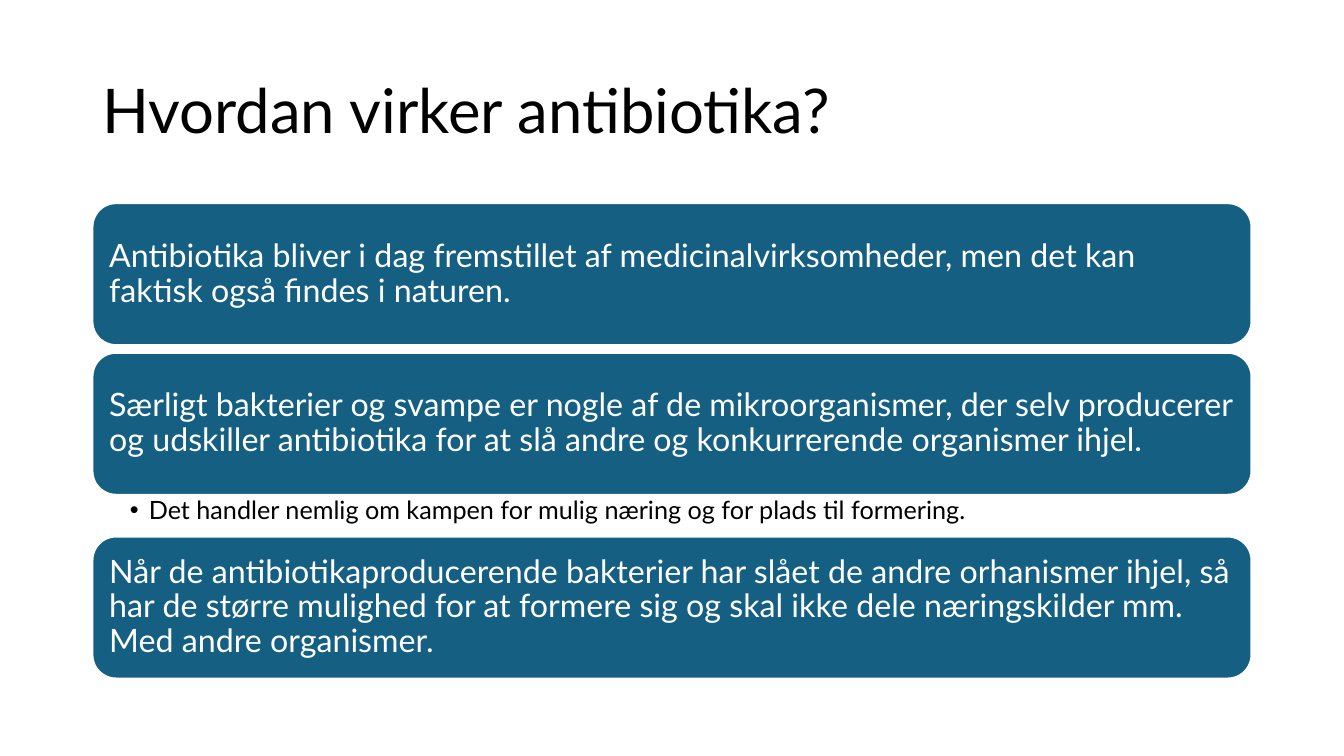
from lxml.etree import SubElement
from pptx import Presentation
from pptx.dml.color import RGBColor
from pptx.enum.shapes import MSO_SHAPE
from pptx.enum.text import MSO_ANCHOR, MSO_AUTO_SIZE, PP_ALIGN
from pptx.oxml.ns import qn
from pptx.util import Cm, Pt

COLORS = {"text": "000000", "box": "156082", "light": "FFFFFF"}
FONT = "Lato"

# Layout in centimetres
LEFT, WIDTH = 2.33, 29.21
BOX_TOP, BOX_HEIGHT, BOX_GAP = 5.12, 3.58, 0.19
NOTE_HEIGHT = 1.05

FACTS = [
    "Antibiotika bliver i dag fremstillet af medicinalvirksomheder, "
    "men det kan faktisk også findes i naturen.",
    "Særligt bakterier og svampe er nogle af de mikroorganismer, der selv producerer "
    "og udskiller antibiotika for at slå andre og konkurrerende organismer ihjel.",
    "Når de antibiotikaproducerende bakterier har slået de andre orhanismer ihjel, "
    "så har de større mulighed for at formere sig og skal ikke dele næringskilder mm. "
    "Med andre organismer.",
]
NOTE = "Det handler nemlig om kampen for mulig næring og for plads til formering."


class SlideBuilder:
    """Holds the style and the current slide."""

    def __init__(self, presentation):
        self.slide = presentation.slides.add_slide(presentation.slide_layouts[1])

    def place(self, shape, top, height):
        shape.left, shape.top = Cm(LEFT), Cm(top)
        shape.width, shape.height = Cm(WIDTH), Cm(height)

    def set_text(self, shape, text, size, color, anchor, margins):
        frame = shape.text_frame
        frame.word_wrap = True
        frame.auto_size = MSO_AUTO_SIZE.NONE
        frame.vertical_anchor = anchor
        frame.margin_left, frame.margin_top, frame.margin_right, frame.margin_bottom = map(Cm, margins)
        paragraph = frame.paragraphs[0]
        paragraph.text = text
        paragraph.alignment = PP_ALIGN.LEFT
        paragraph.line_spacing = 0.9
        paragraph.space_before = Pt(0)
        paragraph.font.name = FONT
        paragraph.font.size = Pt(size)
        paragraph.font.color.rgb = RGBColor.from_string(COLORS[color])

    def title(self, text):
        shape = self.slide.shapes.title
        self.place(shape, 1.01, 3.68)
        self.set_text(shape, text, 44, "text", MSO_ANCHOR.MIDDLE, (0.25, 0.13, 0.25, 0.13))

    def box(self, text, top):
        shape = self.slide.shapes.add_shape(
            MSO_SHAPE.ROUNDED_RECTANGLE, Cm(LEFT), Cm(top), Cm(WIDTH), Cm(BOX_HEIGHT))
        shape.shadow.inherit = False
        shape.fill.solid()
        shape.fill.fore_color.rgb = RGBColor.from_string(COLORS["box"])
        shape.line.color.rgb = RGBColor.from_string(COLORS["light"])
        shape.line.width = Pt(1.5)
        self.set_text(shape, text, 23, "light", MSO_ANCHOR.MIDDLE, (0.25,) * 4)

    def bullet(self, text, top):
        shape = self.slide.placeholders[1]
        self.place(shape, top, NOTE_HEIGHT)
        # Bullet and hanging indent
        properties = shape.text_frame.paragraphs[0]._p.get_or_add_pPr()
        properties.set("marL", str(Cm(0.48)))
        properties.set("indent", str(Cm(-0.48)))
        SubElement(properties, qn("a:buChar")).set("char", "•")
        self.set_text(shape, text, 18, "text", MSO_ANCHOR.TOP, (0.94, 0.08, 0.46, 0.08))


def main():
    presentation = Presentation()
    presentation.slide_width, presentation.slide_height = Cm(33.87), Cm(19.05)
    builder = SlideBuilder(presentation)
    builder.title("Hvordan virker antibiotika?")

    # Stack of boxes, with the bullet between the last two
    top = BOX_TOP
    first, second, third = FACTS
    builder.box(first, top)
    top += BOX_HEIGHT + BOX_GAP
    builder.box(second, top)
    top += BOX_HEIGHT
    builder.bullet(NOTE, top)
    top += NOTE_HEIGHT
    builder.box(third, top)

    presentation.save("out.pptx")


if __name__ == "__main__":
    main()
